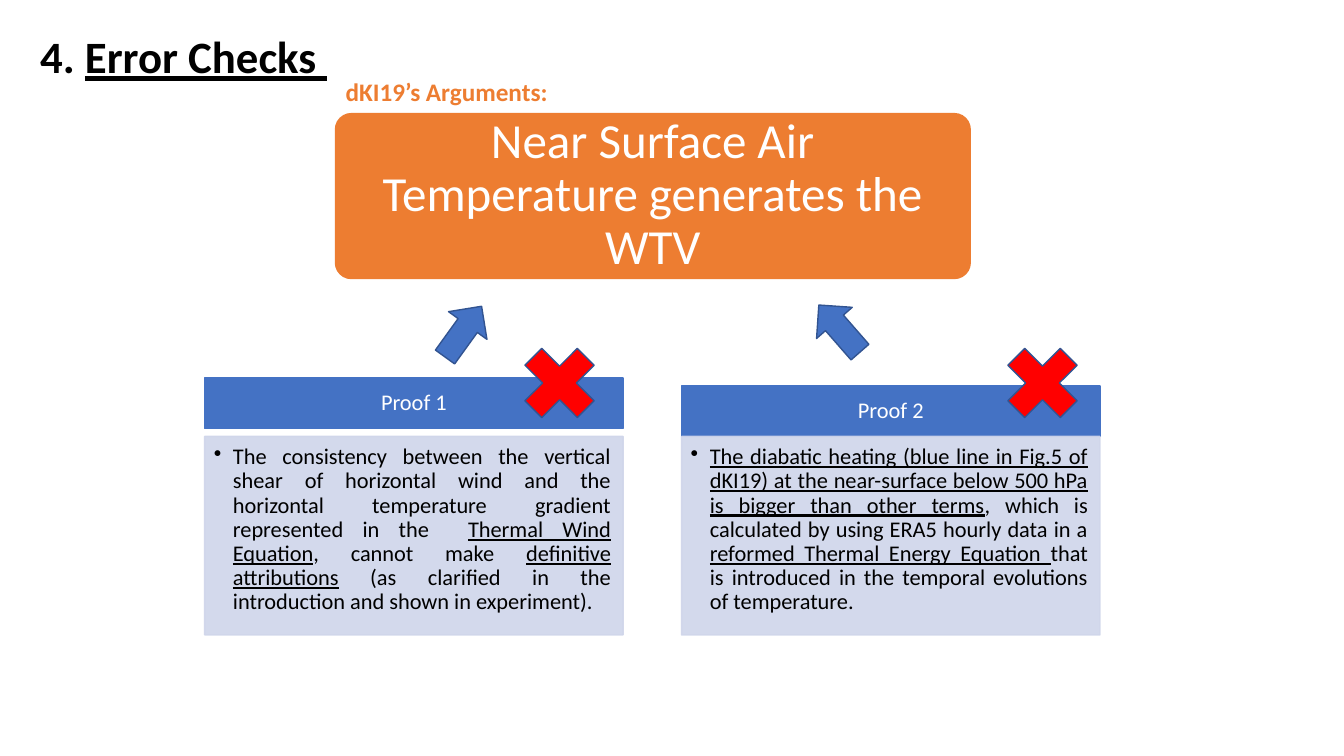
from lxml import etree
from pptx import Presentation
from pptx.dml.color import RGBColor
from pptx.enum.shapes import MSO_SHAPE as Shape
from pptx.enum.text import MSO_ANCHOR as Anchor, PP_ALIGN as Align
from pptx.oxml.ns import qn
from pptx.util import Inches, Pt

FONT = "Calibri"
BLACK, WHITE, ORANGE, BLUE = "000000", "FFFFFF", "ED7D31", "4472C4"
DARK_BLUE, PALE_BLUE, RED = "325491", "CFD5EA", "FF0000"

PROOFS = [
    ("Proof 1", (2.03, 3.75, 4.15, 2.55), [
        ("The consistency between the vertical shear of horizontal wind and the horizontal "
         "temperature gradient represented in the  ", False),
        ("Thermal Wind Equation", True),
        (", cannot make ", False),
        ("definitive attributions", True),
        (" (as clarified in the introduction and shown in experiment). ", False),
    ]),
    ("Proof 2", (6.76, 3.83, 4.15, 2.47), [
        ("The diabatic heating (blue line in Fig.5 of dKI19) at the near-surface below "
         "500 hPa is bigger than other terms", True),
        (", which is calculated by using ERA5 hourly data in a ", False),
        ("reformed Thermal Energy Equation ", True),
        ("that is introduced in the temporal evolutions of temperature.", False),
    ]),
]
ARROWS = [((4.36, 2.98, 0.47, 0.62), 215.8), ((8.09, 2.95, 0.47, 0.62), 138.9)]
CROSSES = [(5.05, 3.3, 1, 1), (9.84, 3.3, 1, 1)]


def color(value):
    return RGBColor.from_string(value)


def add_box(slide, kind, box, fill, line=None):
    shape = slide.shapes.add_shape(kind, *map(Inches, box))
    shape.shadow.inherit = False
    shape.fill.solid()
    shape.fill.fore_color.rgb = color(fill)
    if line:
        shape.line.color.rgb = color(line)
        shape.line.width = Pt(1)
    else:
        shape.line.fill.background()
    return shape


def set_frame(shape, insets, anchor=Anchor.TOP, wrap=True):
    frame = shape.text_frame
    frame.word_wrap = wrap
    frame.vertical_anchor = anchor
    (frame.margin_left, frame.margin_top,
     frame.margin_right, frame.margin_bottom) = map(Inches, insets)
    return frame.paragraphs[0]


def add_run(paragraph, text, size, text_color, bold=False, underline=False):
    run = paragraph.add_run()
    run.text = text
    run.font.name = FONT
    run.font.size = Pt(size)
    run.font.color.rgb = color(text_color)
    run.font.bold = bold
    run.font.underline = underline


def make_translucent(shape, percent):
    for element in shape.element.spPr.iter(qn("a:srgbClr")):
        etree.SubElement(element, qn("a:alpha"), val=str(percent * 1000))


def add_bullet(paragraph, indent):
    properties = paragraph._p.get_or_add_pPr()
    properties.set("marL", str(Inches(indent)))
    properties.set("indent", str(-Inches(indent)))
    etree.SubElement(properties, qn("a:buChar"), char="•")


def add_title(slide, box):
    title = slide.shapes.add_textbox(*map(Inches, box))
    paragraph = set_frame(title, (0.1, 0.05, 0.1, 0.05))
    paragraph.line_spacing = 0.9
    add_run(paragraph, "4. ", 32, BLACK, bold=True)
    add_run(paragraph, "Error Checks ", 32, BLACK, bold=True, underline=True)


def add_claim(slide, box):
    left, top, width, height = box
    claim = add_box(slide, Shape.ROUNDED_RECTANGLE, box, ORANGE)
    claim.adjustments[0] = 0.1
    paragraph = set_frame(claim, (0.2, 0.2, 0.2, 0.2), Anchor.MIDDLE)
    paragraph.alignment = Align.CENTER
    paragraph.line_spacing = 0.9
    add_run(paragraph, "Near Surface Air Temperature generates the WTV", 35, WHITE)

    caption_box = (left + 0.01, top - 0.41, 2.22, 0.4)
    caption = slide.shapes.add_textbox(*map(Inches, caption_box))
    paragraph = set_frame(caption, (0.1, 0.05, 0.1, 0.05), wrap=False)
    add_run(paragraph, "dKI19’s Arguments:", 18, ORANGE, bold=True)


def add_proof(slide, box, heading, runs):
    left, top, width, height = box
    body_height = 1.97
    header = add_box(slide, Shape.RECTANGLE, (left, top, width, 0.5), BLUE, BLUE)
    paragraph = set_frame(header, (0.12, 0.07, 0.12, 0.07), Anchor.MIDDLE)
    paragraph.alignment = Align.CENTER
    paragraph.line_spacing = 0.9
    add_run(paragraph, heading, 16, WHITE)

    body_box = (left, top + height - body_height, width, body_height)
    body = add_box(slide, Shape.RECTANGLE, body_box, PALE_BLUE, PALE_BLUE)
    make_translucent(body, 90)
    paragraph = set_frame(body, (0.09, 0.09, 0.12, 0.14))
    paragraph.alignment = Align.JUSTIFY
    paragraph.line_spacing = 0.9
    add_bullet(paragraph, 0.19)
    for text, underline in runs:
        add_run(paragraph, text, 16, BLACK, underline=underline)


def add_marks(slide):
    for box, angle in ARROWS:
        arrow = add_box(slide, Shape.DOWN_ARROW, box, BLUE, DARK_BLUE)
        arrow.rotation = angle
    for box in CROSSES:
        add_box(slide, Shape.MATH_MULTIPLY, box, RED, DARK_BLUE)


def main():
    presentation = Presentation()
    presentation.slide_width = Inches(13.33)
    presentation.slide_height = Inches(7.5)
    slide = presentation.slides.add_slide(presentation.slide_layouts[6])
    add_title(slide, (0.3, 0.3, 6.37, 1.02))
    add_claim(slide, (3.32, 1.12, 6.31, 1.65))
    for heading, box, runs in PROOFS:
        add_proof(slide, box, heading, runs)
    add_marks(slide)
    presentation.save("out.pptx")


if __name__ == "__main__":
    main()
